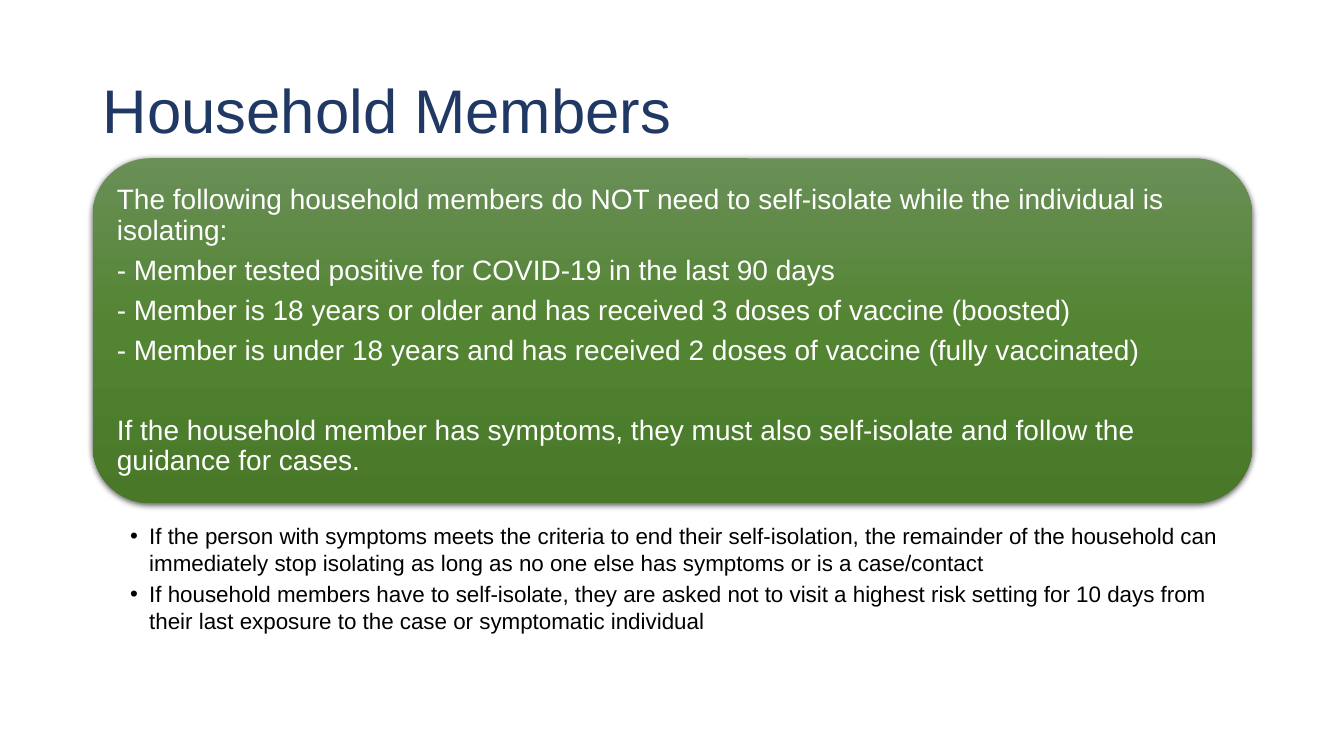
from lxml.etree import SubElement
from pptx import Presentation
from pptx.dml.color import RGBColor
from pptx.enum.shapes import MSO_SHAPE
from pptx.enum.text import MSO_ANCHOR, PP_ALIGN
from pptx.oxml.ns import qn
from pptx.util import Emu, Pt

EMU_PER_PX = 9144
FONT = "Arial"
EXEMPTIONS = [
    "The following household members do NOT need to self-isolate while the individual is isolating:",
    "- Member tested positive for COVID-19 in the last 90 days",
    "- Member is 18 years or older and has received 3 doses of vaccine (boosted)",
    "- Member is under 18 years and has received 2 doses of vaccine (fully vaccinated)",
]
SYMPTOMS = ("If the household member has symptoms, they must also self-isolate "
            "and follow the guidance for cases.")
GUIDANCE = [
    "If the person with symptoms meets the criteria to end their self-isolation, the remainder of "
    "the household can immediately stop isolating as long as no one else has symptoms or is a "
    "case/contact",
    "If household members have to self-isolate, they are asked not to visit a highest risk setting "
    "for 10 days from their last exposure to the case or symptomatic individual",
]


def px(length):
    return Emu(length * EMU_PER_PX)


def box(left, top, width, height):
    return px(left), px(top), px(width), px(height)


def color(hex_value):
    return RGBColor.from_string(hex_value)


def add_text(paragraph, text, size, hex_value):
    run = paragraph.add_run()
    run.text = text
    run.font.name = FONT
    run.font.size = Pt(size)
    run.font.color.rgb = color(hex_value)


def set_title(slide, text):
    title = slide.shapes.title
    title.left, title.top, title.width, title.height = box(92, 40, 1150, 145)
    title.text_frame.vertical_anchor = MSO_ANCHOR.MIDDLE
    heading = title.text_frame.paragraphs[0]
    heading.alignment = PP_ALIGN.LEFT
    heading.line_spacing = 0.9
    add_text(heading, text, 44, "203864")


def add_color(parent, hex_value):
    return SubElement(parent, qn("a:srgbClr"), val=hex_value)


def add_panel(slide, bounds, gradient):
    panel = slide.shapes.add_shape(MSO_SHAPE.ROUNDED_RECTANGLE, *box(*bounds))
    panel.line.fill.background()
    panel.fill.gradient()
    panel.fill.gradient_angle = 270
    properties = panel._element.spPr
    stops = properties.find(qn("a:gradFill")).find(qn("a:gsLst"))
    for stop in list(stops):
        stops.remove(stop)
    for percent, hex_value in gradient:
        add_color(SubElement(stops, qn("a:gs"), pos=str(percent * 1000)), hex_value)
    panel.shadow.inherit = False
    shadow = SubElement(properties.find(qn("a:effectLst")), qn("a:outerShdw"),
                        blurRad=str(Pt(4.5)), dist=str(Pt(1.5)), dir="5400000",
                        algn="ctr", rotWithShape="0")
    SubElement(add_color(shadow, "000000"), qn("a:alpha"), val="63000")


def add_frame(slide, bounds, insets, anchor):
    frame = slide.shapes.add_textbox(*box(*bounds)).text_frame
    frame.word_wrap = True
    frame.vertical_anchor = anchor
    (frame.margin_left, frame.margin_top,
     frame.margin_right, frame.margin_bottom) = map(px, insets)
    return frame


def add_paragraphs(frame, texts, size, hex_value, space_after):
    for index, text in enumerate(texts):
        paragraph = frame.add_paragraph() if index else frame.paragraphs[0]
        paragraph.space_after = Pt(space_after)
        add_text(paragraph, text, size, hex_value)
    return frame.paragraphs


def add_bullet(paragraph, indent):
    paragraph.level = 1
    properties = paragraph._p.get_or_add_pPr()
    properties.set("marL", str(px(indent)))
    properties.set("indent", str(px(-indent)))
    SubElement(properties, qn("a:buFont"), typeface=FONT)
    SubElement(properties, qn("a:buChar"), char="•")


def main():
    deck = Presentation()
    deck.slide_width, deck.slide_height = px(1333), px(750)
    slide = deck.slides.add_slide(deck.slide_layouts[5])
    set_title(slide, "Household Members")

    add_panel(slide, (92, 157, 1150, 342),
              [(0, "6A8F57"), (50, "528431"), (100, "487828")])
    exemption_frame = add_frame(slide, (108, 174, 1117, 309), (8, 8, 8, 8), MSO_ANCHOR.MIDDLE)
    exemptions = add_paragraphs(exemption_frame, EXEMPTIONS + [SYMPTOMS], 20, "FFFFFF", 7)
    for exemption in exemptions:
        exemption.line_spacing = 0.9
    exemptions[-1].space_before = Pt(28.5)

    guidance_frame = add_frame(slide, (92, 516, 1150, 129), (37, 2, 12, 2), MSO_ANCHOR.TOP)
    for guidance in add_paragraphs(guidance_frame, GUIDANCE, 16, "000000", 3.2):
        add_bullet(guidance, 19)

    deck.save("out.pptx")


if __name__ == "__main__":
    main()
